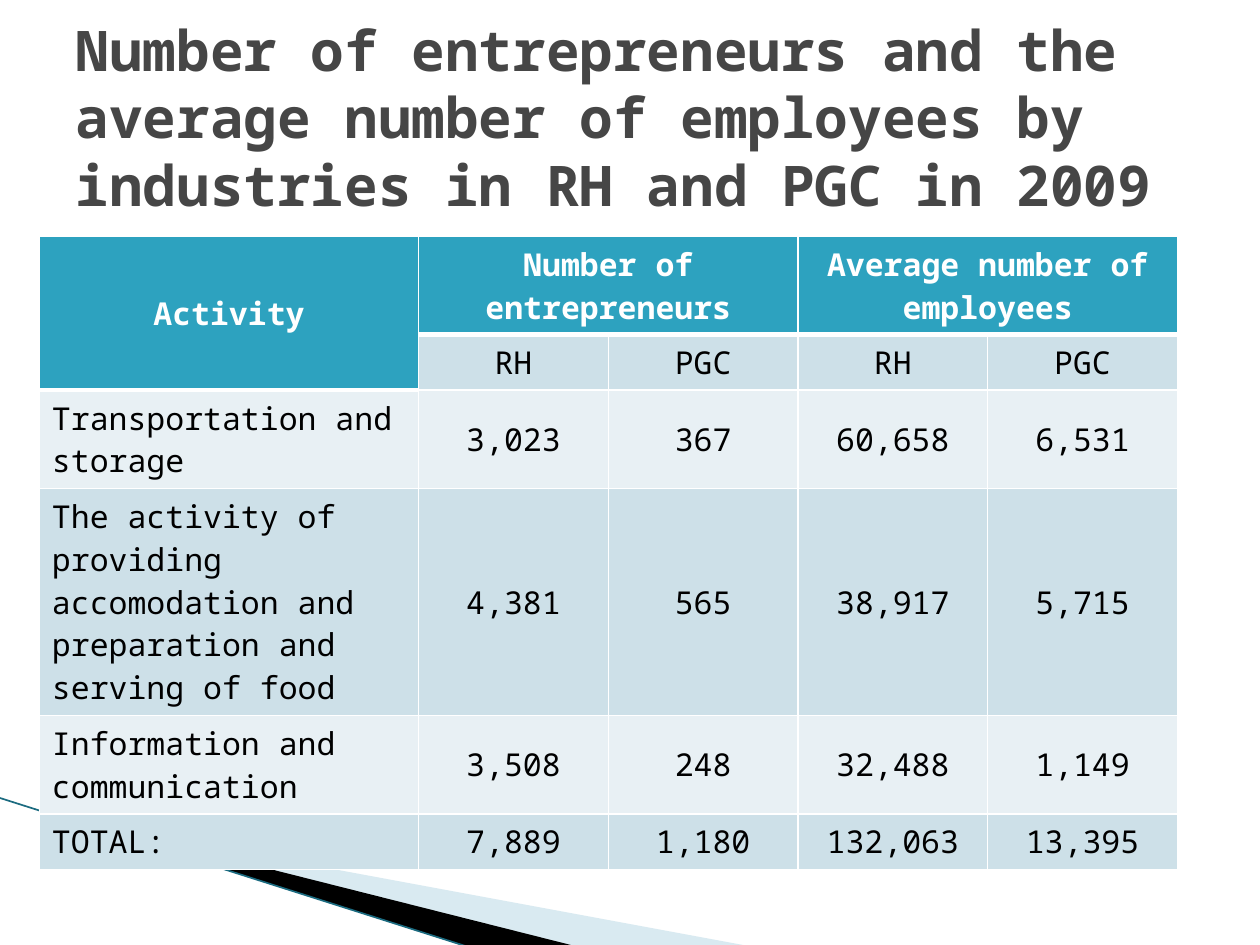
import lxml.etree
import pptx
import pptx.dml.color
import pptx.enum.shapes
import pptx.enum.text
import pptx.oxml.ns
import pptx.util

Pt = pptx.util.Pt
qn = pptx.oxml.ns.qn
ALIGN = pptx.enum.text.PP_ALIGN
MIDDLE = pptx.enum.text.MSO_ANCHOR.MIDDLE
TOP = pptx.enum.text.MSO_ANCHOR.TOP

TITLE = ("Number of entrepreneurs and the average number of employees "
         "by industries in RH and PGC in 2009")
ROWS = [
    ["Activity", "Number of entrepreneurs", "", "Average number of employees", ""],
    ["", "RH", "PGC", "RH", "PGC"],
    ["Transportation and storage", "3,023", "367", "60,658", "6,531"],
    ["The activity of providing accomodation and preparation and serving of food",
     "4,381", "565", "38,917", "5,715"],
    ["Information and communication", "3,508", "248", "32,488", "1,149"],
    ["TOTAL:", "7,889", "1,180", "132,063", "13,395"],
]
COLUMN_WIDTHS = [216.7, 108.4, 108.4, 108.4, 108.4]
ROW_HEIGHT = 29.5
MERGES = [((0, 0), (1, 0)), ((0, 1), (0, 2)), ((0, 3), (0, 4))]
HEADER_FILL = "2DA2BF"
BAND_FILLS = ["E8F0F4", "CDE0E8"]
HEADER_FONT = {"name": "Noto Sans Mono", "size": Pt(18), "bold": True}
BODY_FONT = {**HEADER_FONT, "bold": False}
TITLE_FONT = {**HEADER_FONT, "size": Pt(32)}


def rgb(value):
    return pptx.dml.color.RGBColor.from_string(value)


def place(shape, frame):
    for name, value in zip(("left", "top", "width", "height"), frame):
        setattr(shape, name, Pt(value))


def write(frame, text, font, color, align):
    frame.text = text
    para = frame.paragraphs[0]
    para.alignment = align
    for span in para.runs:
        for name, value in font.items():
            setattr(span.font, name, value)
        span.font.color.rgb = rgb(color)


def add_title(slide):
    title = slide.shapes.title
    place(title, (36, 21.6, 648, 90))
    frame = title.text_frame
    frame.auto_size = pptx.enum.text.MSO_AUTO_SIZE.NONE
    frame.vertical_anchor = MIDDLE
    write(frame, TITLE, TITLE_FONT, "464646", ALIGN.LEFT)


def reframe(shape, frame):
    """Give a freeform a new frame while its outline stays where it is on the slide."""
    old_left, old_top = shape.left, shape.top
    place(shape, frame)
    outline = shape._element.spPr.find(".//" + qn("a:path"))
    outline.set("w", str(shape.width))
    outline.set("h", str(shape.height))
    for point in outline.iter(qn("a:pt")):
        point.set("x", str(int(point.get("x")) + old_left - shape.left))
        point.set("y", str(int(point.get("y")) + old_top - shape.top))


def add_wedge(slide, points, frame, color, opacity=100):
    """Draw a closed outline without a line; opacity is in percent."""
    corners = [(Pt(x), Pt(y)) for x, y in points]
    builder = slide.shapes.build_freeform(*corners[0])
    builder.add_line_segments(corners[1:], close=True)
    wedge = builder.convert_to_shape()
    reframe(wedge, frame)
    wedge.shadow.inherit = False
    wedge.line.fill.background()
    wedge.fill.solid()
    wedge.fill.fore_color.rgb = rgb(color)
    if opacity < 100:
        tone = wedge._element.spPr.find(qn("a:solidFill")).find(qn("a:srgbClr"))
        lxml.etree.SubElement(tone, qn("a:alpha"), val=str(opacity * 1000))


def add_line(slide, start, end, color, width):
    line = slide.shapes.add_connector(
        pptx.enum.shapes.MSO_CONNECTOR.STRAIGHT, *map(Pt, start + end))
    line.line.color.rgb = rgb(color)
    line.line.width = Pt(width)
    lxml.etree.SubElement(line._element.spPr, qn("a:effectLst"))


def set_borders(cell, widths, color="FFFFFF"):
    """Set border widths in points, keyed by side; call before filling the cell."""
    properties = cell._tc.get_or_add_tcPr()
    for side, width in widths.items():
        border = lxml.etree.SubElement(properties, qn("a:ln" + side), w=str(Pt(width)))
        fill = lxml.etree.SubElement(border, qn("a:solidFill"))
        lxml.etree.SubElement(fill, qn("a:srgbClr"), val=color)


def format_cell(cell, row, column, text):
    header = row == 0 or (row == 1 and column == 0)
    set_borders(cell, {"L": 1, "R": 1, "T": 3 if row == 1 else 1, "B": 3 if row == 0 else 1})
    cell.fill.solid()
    cell.fill.fore_color.rgb = rgb(HEADER_FILL if header else BAND_FILLS[row % 2])
    centred = column > 0 or header
    middle = (row > 1 and column > 0) or (header and column == 0)
    cell.vertical_anchor = MIDDLE if middle else TOP
    write(cell.text_frame, text, HEADER_FONT if header else BODY_FONT,
          "FFFFFF" if header else "000000", ALIGN.CENTER if centred else ALIGN.LEFT)


def add_activity_table(slide):
    table = slide.shapes.add_table(
        len(ROWS), len(COLUMN_WIDTHS), Pt(22.5), Pt(135),
        Pt(sum(COLUMN_WIDTHS)), Pt(ROW_HEIGHT * len(ROWS))).table
    for column, width in zip(table.columns, COLUMN_WIDTHS):
        column.width = Pt(width)
    for row, texts in enumerate(ROWS):
        for column, text in enumerate(texts):
            format_cell(table.cell(row, column), row, column, text)
    for first, last in MERGES:
        table.cell(*first).merge(table.cell(*last))


def main():
    deck = pptx.Presentation()
    deck.slide_width, deck.slide_height = Pt(720), Pt(540)
    slide = deck.slides.add_slide(deck.slide_layouts.get_by_name("Title Only"))
    add_title(slide)
    add_wedge(slide, [(39.6, 468.7), (428.4, 540.7), (328.3, 540.7), (39.6, 468)],
              (56.2, 393.8, 299.5, 113.8), "A0CBDC", opacity=40)
    add_wedge(slide, [(38.2, 467.3), (329, 540.7), (267.8, 541.4), (38.9, 468)],
              (-4.3, 455.8, 299.5, 66.2), "000000")
    add_line(slide, (-0.7, 455.8), (268.5, 541.4), "1B6B80", 0.95)
    add_activity_table(slide)
    deck.save("out.pptx")


if __name__ == "__main__":
    main()
